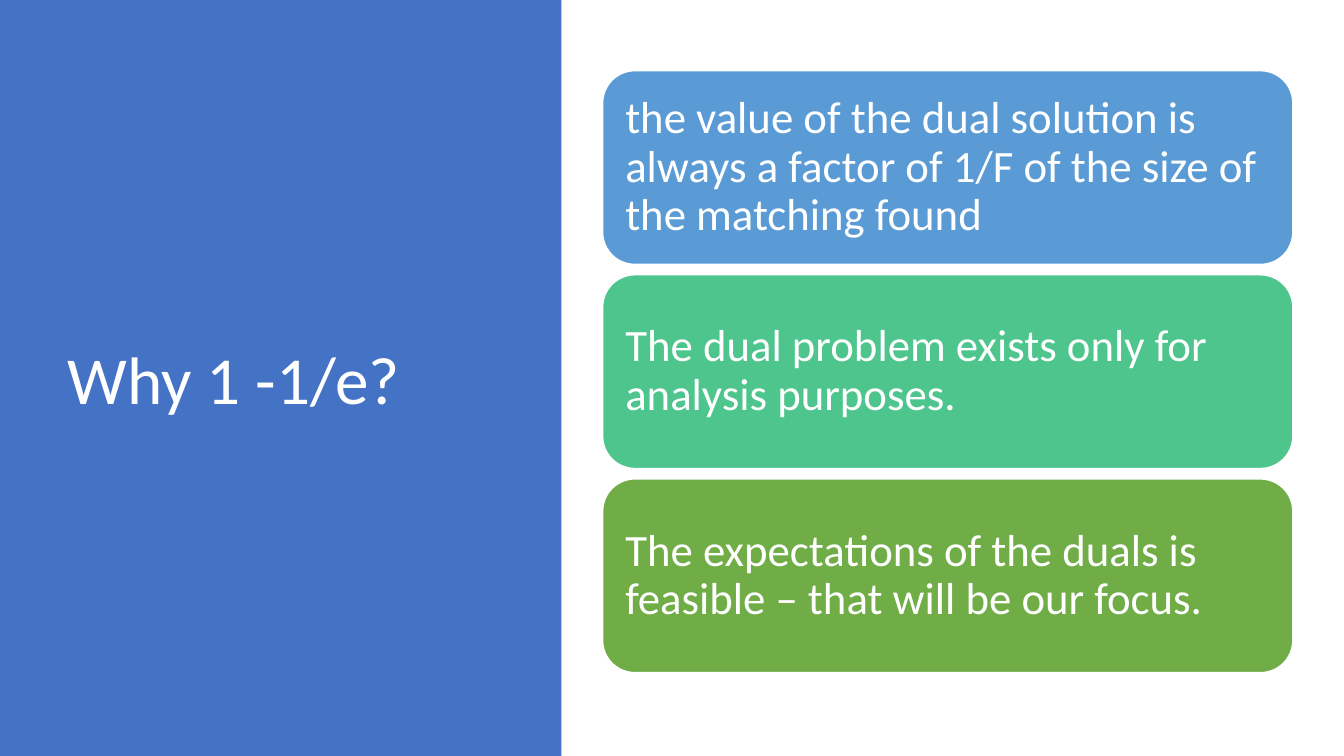
import pptx
import pptx.dml.color
import pptx.enum.shapes
import pptx.enum.text
import pptx.util

Pt = pptx.util.Pt
SHAPES = pptx.enum.shapes.MSO_SHAPE

COLORS = {
    "white": "FFFFFF",
    "panel": "4472C4",
    "blue": "5B9BD5",
    "teal": "4DC58D",
    "green": "70AD47",
}
FONT = "Calibri"
SLIDE_WIDTH, SLIDE_HEIGHT = 960, 540
PANEL_WIDTH = 401
CARD_GAP = 7.4

TITLE = "Why 1 -1/e?"
CARDS = [
    ("blue", "the value of the dual solution is always a factor of 1/F "
             "of the size of the matching found"),
    ("teal", "The dual problem exists only for analysis purposes."),
    ("green", "The expectations of the duals is feasible – "
              "that will be our focus."),
]


def color(name):
    return pptx.dml.color.RGBColor.from_string(COLORS[name])


def add_block(page, kind, box, fill):
    shape = page.shapes.add_shape(kind, *(Pt(length) for length in box))
    shape.shadow.inherit = False
    shape.fill.solid()
    shape.fill.fore_color.rgb = color(fill)
    shape.line.fill.background()
    return shape


def write(shape, text, size, inset):
    frame = shape.text_frame
    frame.text = text
    frame.word_wrap = True
    frame.vertical_anchor = pptx.enum.text.MSO_ANCHOR.MIDDLE
    frame.margin_left = frame.margin_right = Pt(inset)
    frame.margin_top = frame.margin_bottom = Pt(inset)
    para = frame.paragraphs[0]
    para.alignment = pptx.enum.text.PP_ALIGN.LEFT
    para.line_spacing = 0.9
    span = para.runs[0]
    span.font.name = FONT
    span.font.size = Pt(size)
    span.font.color.rgb = color("white")


def add_title_panel(page, box):
    left, top, width, height = box
    add_block(page, SHAPES.RECTANGLE, box, "panel")
    title = page.shapes.add_textbox(
        Pt(left + 41), Pt(top + 49), Pt(width - 101), Pt(height - 91))
    write(title, TITLE, 48, 7.2)


def add_cards(page, box):
    left, top, width, height = box
    card_height = (height - CARD_GAP * (len(CARDS) - 1)) / len(CARDS)
    for index, (fill, text) in enumerate(CARDS):
        card_top = top + index * (card_height + CARD_GAP)
        card = add_block(page, SHAPES.ROUNDED_RECTANGLE,
                         (left, card_top, width, card_height), fill)
        card.line.color.rgb = color("white")
        card.line.width = Pt(1)
        write(card, text, 32, 9.4)


def main():
    deck = pptx.Presentation()
    deck.slide_width, deck.slide_height = Pt(SLIDE_WIDTH), Pt(SLIDE_HEIGHT)
    page = deck.slides.add_slide(deck.slide_layouts[6])

    # Title panel on the left
    add_title_panel(page, (0, 0, PANEL_WIDTH, SLIDE_HEIGHT))
    # Stacked statements on the right
    add_cards(page, (430.5, 50.5, 493, 430))

    deck.save("out.pptx")


if __name__ == "__main__":
    main()
